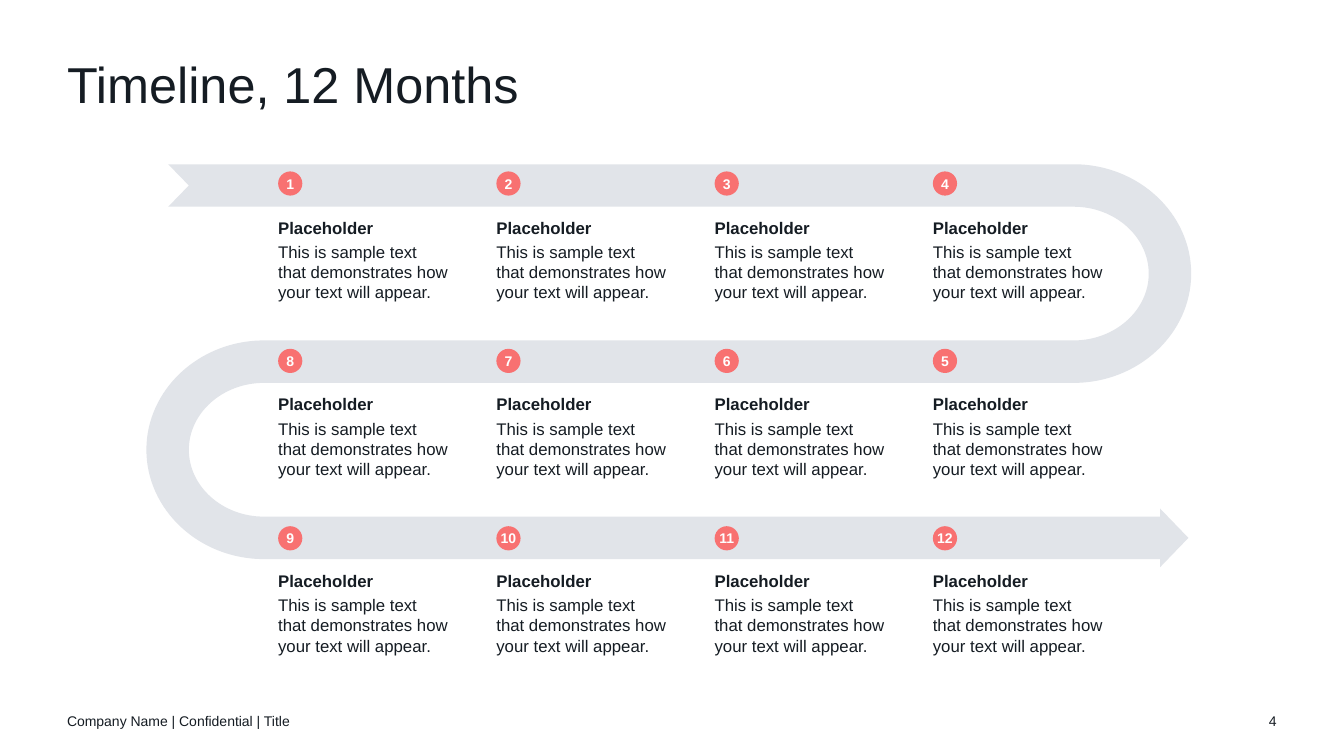
from dataclasses import dataclass

from lxml import etree
from pptx import Presentation
from pptx import util as u
from pptx.dml.color import RGBColor
from pptx.enum import shapes, text
from pptx.oxml.ns import qn


@dataclass(frozen=True)
class Theme:
    """Colours, font and type sizes of the slide."""
    ink: str = "151C23"
    ribbon: str = "E1E4E9"
    badge: str = "F87171"
    white: str = "FFFFFF"
    font: str = "Arial"
    title: int = 36
    body: int = 12
    small: int = 10


THEME = Theme()
ROWS, COLS = 3, 4
BAND = 1.07
COL_PITCH, BADGE_PITCH, NOTE_PITCH = 5.5, 4.47, 4.45
ROUND = 0.55
SAMPLE = "This is sample text that demonstrates how your text will appear."


def cm_box(*lengths):
    """Turn centimetre numbers into lengths."""
    return [u.Cm(n) for n in lengths]


def paint(sp, colour):
    """Give a shape a flat fill without line or shadow."""
    sp.fill.solid()
    sp.fill.fore_color.rgb = RGBColor.from_string(colour)
    sp.line.fill.background()
    sp.shadow.inherit = False


def frame(sp, anchor, fit=text.MSO_AUTO_SIZE.NONE, wrap=True):
    """Prepare a text frame without margins and return it."""
    tf = sp.text_frame
    tf.margin_left = tf.margin_right = tf.margin_top = tf.margin_bottom = 0
    tf.word_wrap = wrap
    tf.auto_size = fit
    tf.vertical_anchor = anchor
    return tf


def write(p, words, size=THEME.body, colour=THEME.ink, bold=False,
          align=text.PP_ALIGN.LEFT, after=0, spacing=1.0):
    """Write one formatted run into a paragraph."""
    p.alignment = align
    p.space_after = u.Pt(after)
    p.line_spacing = spacing
    r = p.add_run()
    r.text = words
    r.font.name = THEME.font
    r.font.size = u.Pt(size)
    r.font.bold = bold
    r.font.color.rgb = RGBColor.from_string(colour)


def bend(cx, cy, rx, ry, side, down):
    """Return a line to a half ellipse and its two curves."""
    apex = cx + side * rx
    near = cx + side * rx * ROUND
    rise, reach = down * ry, down * ry * ROUND
    return [
        [(cx, cy - rise)],
        [(near, cy - rise), (apex, cy - reach), (apex, cy)],
        [(apex, cy + reach), (near, cy + rise), (cx, cy + rise)],
    ]


def add_outline(s, segments):
    """Draw a closed outline of lines and curves and return it."""
    start, *ends = [cm_box(*segment[-1]) for segment in segments]
    builder = s.shapes.build_freeform(*start)
    builder.add_line_segments(ends, close=True)
    sp = builder.convert_to_shape()
    lines = list(sp.element.iter(qn("a:lnTo")))
    for line, segment in zip(lines, segments[1:]):
        controls = segment[:-1]
        if controls:
            line.tag = qn("a:cubicBezTo")
        for i, (x, y) in enumerate(controls):
            point = etree.Element(qn("a:pt"), x=str(u.Cm(x) - sp.left),
                                  y=str(u.Cm(y) - sp.top))
            line.insert(i, point)
    return sp


def add_ribbon(s, x, y, w, h):
    """Draw the winding arrow inside its box."""
    pitch = (h - BAND) / (ROWS - 1)
    right, bottom = x + w, y + h
    radius, flare = 2.96, 0.2
    outer = radius, (pitch + BAND) / 2
    inner = radius - BAND, (pitch - BAND) / 2
    right_bend = right - radius, y + (pitch + BAND) / 2
    left_bend = x + radius, y + pitch + (pitch + BAND) / 2
    shaft, tip = right - 0.78, right - 0.07
    tail, notch = x + 0.55, x + 1.07
    ribbon = add_outline(s, [
        [(tail, y)],
        *bend(*right_bend, *outer, 1, 1),
        *bend(*left_bend, *inner, -1, 1),
        [(shaft, bottom - BAND)],
        [(shaft, bottom - BAND - flare)],
        [(tip, bottom - BAND / 2)],
        [(shaft, bottom + flare)],
        [(shaft, bottom)],
        *bend(*left_bend, *outer, -1, -1),
        *bend(*right_bend, *inner, 1, -1),
        [(tail, y + BAND)],
        [(notch, y + BAND / 2)],
    ])
    paint(ribbon, THEME.ribbon)


def add_badge(s, number, x, y, size):
    """Place a numbered circle."""
    sp = s.shapes.add_shape(shapes.MSO_SHAPE.OVAL, *cm_box(x, y, size, size))
    paint(sp, THEME.badge)
    tf = frame(sp, text.MSO_ANCHOR.MIDDLE)
    write(tf.paragraphs[0], str(number), size=THEME.small, colour=THEME.white,
          bold=True, align=text.PP_ALIGN.CENTER)


def add_note(s, x, y, w, h):
    """Place the heading and sample text of a month."""
    sp = s.shapes.add_textbox(*cm_box(x, y, w, h))
    tf = frame(sp, text.MSO_ANCHOR.TOP, text.MSO_AUTO_SIZE.SHAPE_TO_FIT_TEXT)
    write(tf.paragraphs[0], "Placeholder", bold=True, after=3)
    write(tf.add_paragraph(), SAMPLE, after=3)


def add_timeline(s, x, y, w, h):
    """Fill the box with the ribbon and its months in winding order."""
    add_ribbon(s, x, y, w, h)
    for i in range(ROWS * COLS):
        row, step = divmod(i, COLS)
        col = COLS - 1 - step if row % 2 else step
        left = x + 3.32 + col * COL_PITCH
        add_note(s, left, y + 1.34 + row * NOTE_PITCH, 4.32, 2.16)
        add_badge(s, i + 1, left, y + 0.18 + row * BADGE_PITCH, 0.61)


def add_title(s, words, x, y, w, h):
    """Move and format the title placeholder."""
    sp = s.shapes.title
    sp.left, sp.top, sp.width, sp.height = cm_box(x, y, w, h)
    tf = frame(sp, text.MSO_ANCHOR.TOP)
    write(tf.paragraphs[0], words, size=THEME.title, spacing=0.9)


def add_footer(s, words, page, x, y, w, h):
    """Place the footer line at the left and the page number at the right."""
    page_width = 1.27
    parts = [
        (words, x, 11.43, text.PP_ALIGN.LEFT),
        (page, x + w - page_width, page_width, text.PP_ALIGN.RIGHT),
    ]
    for label, left, width, align in parts:
        sp = s.shapes.add_textbox(*cm_box(left, y, width, h))
        tf = frame(sp, text.MSO_ANCHOR.MIDDLE)
        write(tf.paragraphs[0], label, size=THEME.small, align=align)


def main():
    """Build and save the timeline slide."""
    prs = Presentation()
    prs.slide_width, prs.slide_height = cm_box(33.87, 19.05)
    s = prs.slides.add_slide(prs.slide_layouts.get_by_name("Title Only"))
    s.background.fill.solid()
    s.background.fill.fore_color.rgb = RGBColor.from_string(THEME.white)
    add_title(s, "Timeline, 12 Months", 1.69, 1.52, 30.48, 1.52)
    add_timeline(s, 3.69, 4.14, 26.33, 9.95)
    add_footer(s, "Company Name | Confidential | Title", "4", 1.69, 17.65, 30.48, 1.02)
    prs.save("out.pptx")


if __name__ == "__main__":
    main()
